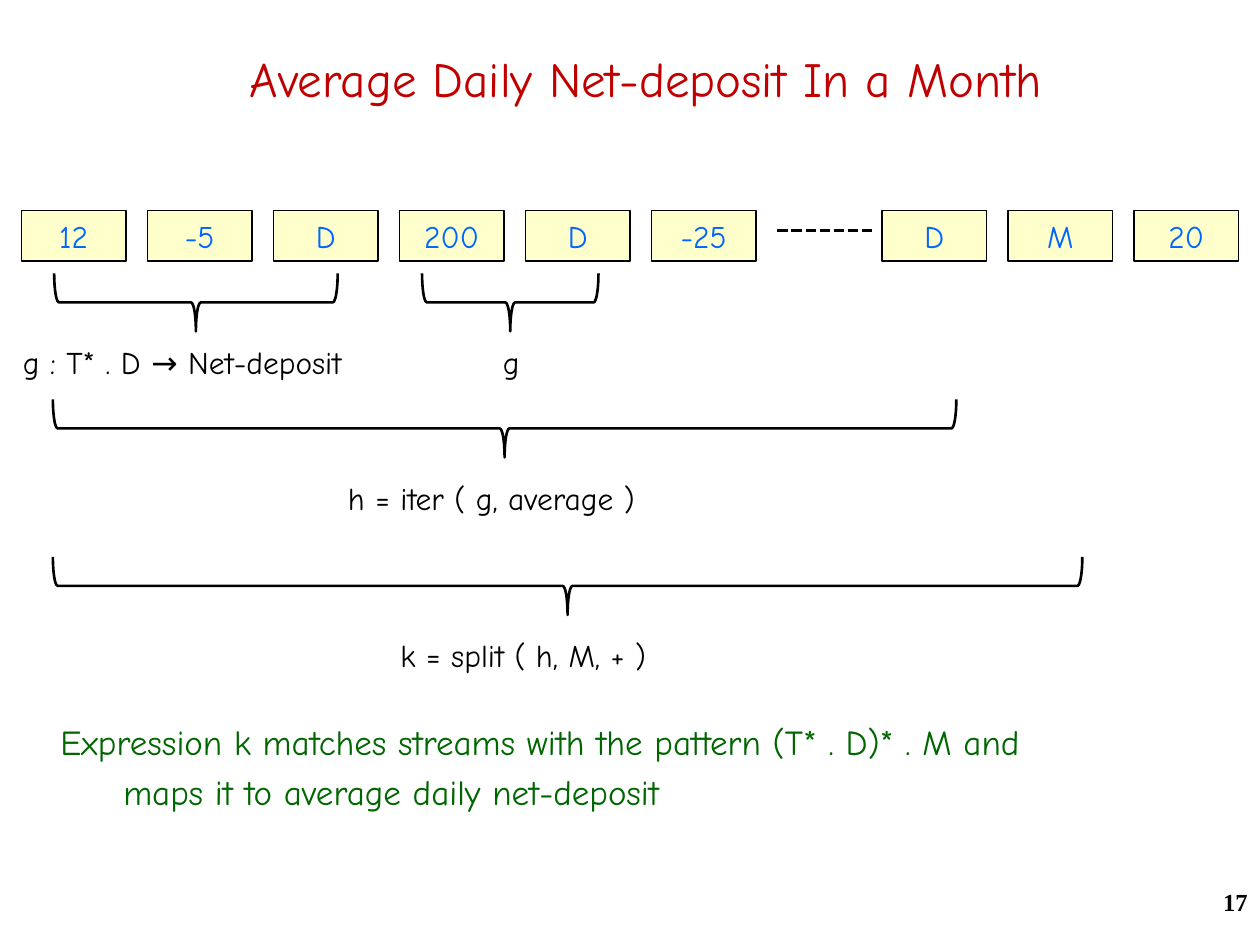
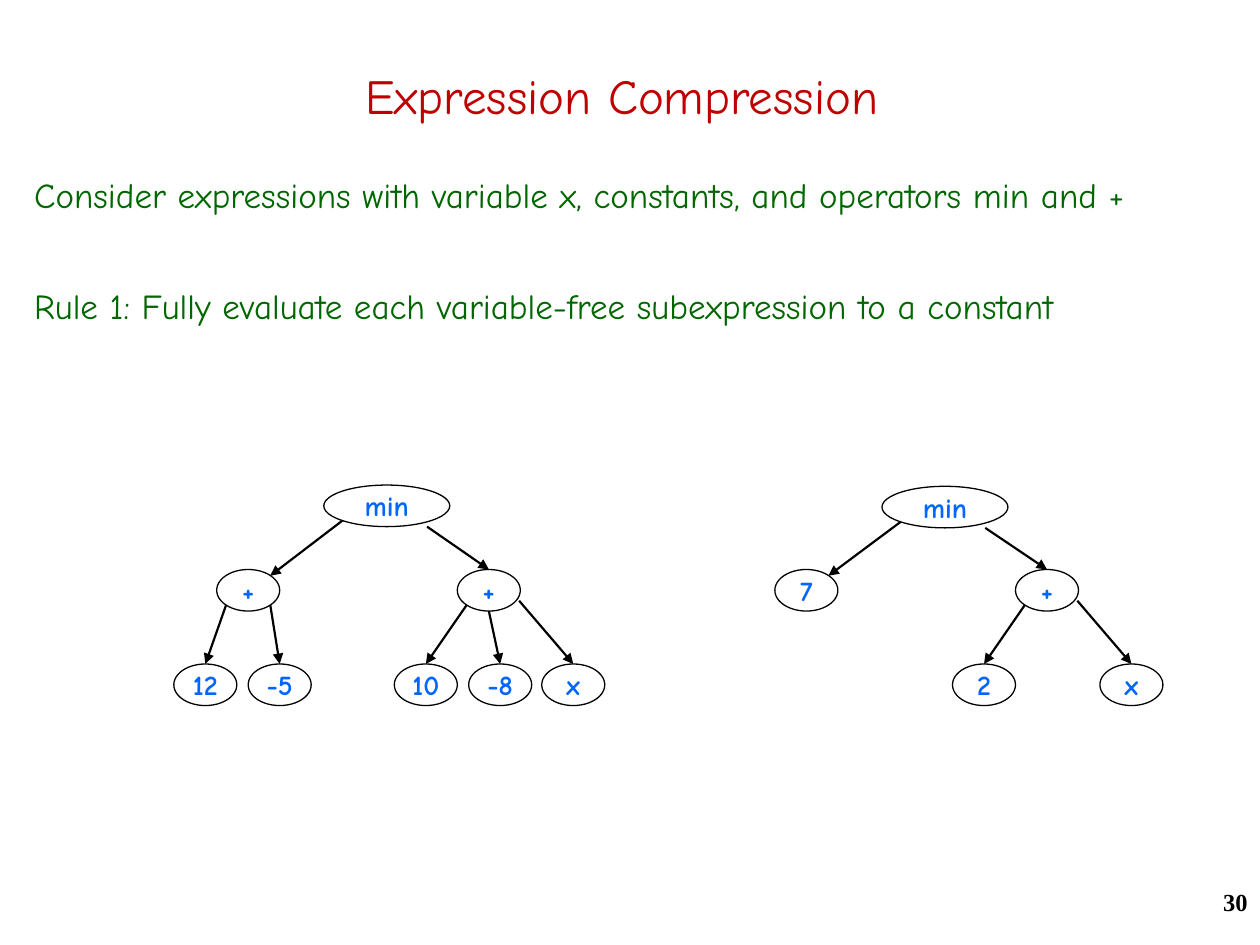
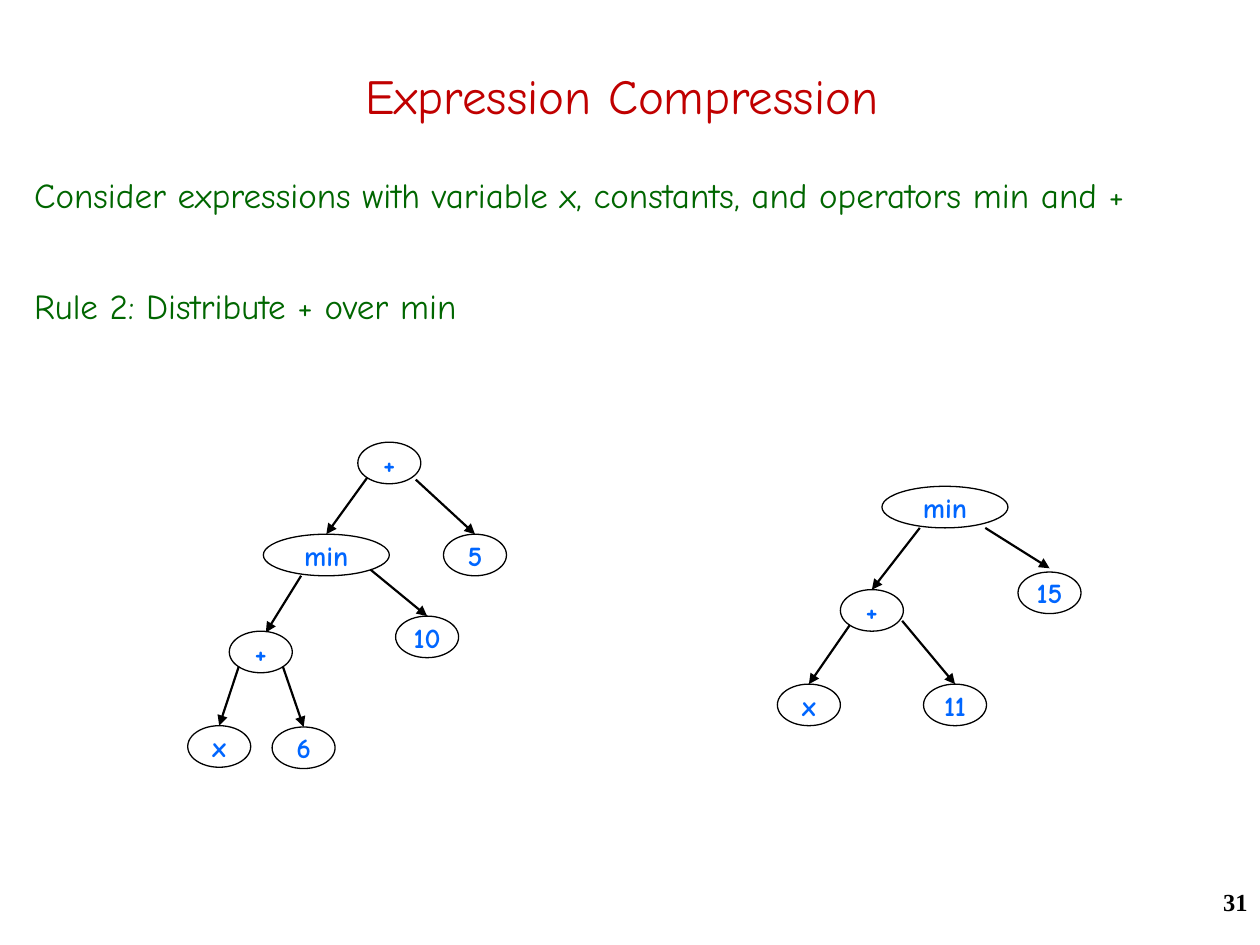
import pptx
import pptx.dml.color
import pptx.enum.dml
import pptx.enum.shapes
import pptx.enum.text
import pptx.oxml.ns
import pptx.util
from dataclasses import dataclass
from lxml import etree

Inches, Pt = pptx.util.Inches, pptx.util.Pt
SHAPE = pptx.enum.shapes.MSO_SHAPE
ALIGN = pptx.enum.text.PP_ALIGN
ANCHOR = pptx.enum.text.MSO_ANCHOR


@dataclass(frozen=True)
class Theme:
    font: str = "Comic Neue"
    number_font: str = "Times New Roman"
    title: str = "C00000"
    body: str = "006600"
    token: str = "0066FF"
    token_fill: str = "FFFFCC"
    ink: str = "000000"
    title_size: int = 28
    body_size: int = 20
    label_size: int = 18
    node_size: int = 16
    number_size: int = 14


THEME = Theme()
SLIDE_W, SLIDE_H = 10, 7.5
NUMBER_BOX = (7.92, 6.99, 2.08, 0.5)

# Stream slide: tokens sit one inch apart in two groups
STREAM = {
    "title": "Average Daily Net-deposit In a Month",
    "title_box": (0.25, 0.33, 9.75, 0.58),
    "number": 17,
    "token_groups": [(0.17, ["12", "-5", "D", "200", "D", "-25"]),
                     (7, ["D", "M", "20"])],
    "ellipsis": ((6.17, 1.83), (6.92, 1.83)),
    # Each match: brace left, top and span; label, its left, top and width
    "matches": [
        ((0.43, 2.17, 2.25), " g : T* . D → Net-deposit", (0, 2.67, 3.17)),
        ((3.35, 2.17, 1.4), " g", (3.81, 2.67, 0.49)),
        ((0.42, 3.17, 7.17), " h = iter ( g, average )", (2.58, 3.75, 2.83)),
        ((0.42, 4.42, 8.17), "k = split ( h, M, + )", (3.08, 5, 2.83)),
    ],
    "summary": ["Expression k matches streams with the pattern (T* . D)* . M and",
                "\tmaps it to average daily net-deposit"],
    "summary_box": (0.38, 5.67, 9.62, 1.08),
}
TOKEN_TOP, TOKEN_W, TOKEN_H, TOKEN_STEP = 1.67, 0.83, 0.4, 1
BRACE_DEPTH = 0.46
SUMMARY_GAP, RULE_GAP = 4.6, 39

# Where edges leave or reach a node, as shares of the node's width and height
TOP, TOP_RIGHT, TOP_INNER, ABOVE = (0.5, 0), (0.85, 0.15), (0.58, 0.03), (0.5, -0.09)
LEFT, MIDDLE, RIGHT = (0.15, 0.85), (0.5, 1), (0.85, 0.85)
SIDE, CORNER = (0.98, 0.75), (0.92, 0.9)
MIN_LEFT, MIN_RIGHT = (0.3, 1), (0.82, 1)

# Trees: nodes are key: (label, left, top); edges are (parent, child, leave, reach)
COMPRESSION_TITLE = "Expression Compression "
COMPRESSION_TITLE_BOX = (0.75, 0.42, 8.5, 0.67)
PREMISE = "Consider expressions with variable x, constants, and operators min and +"
NODE_H = 0.33
NODE_W = {"min": 1}
DEFAULT_NODE_W = 0.5

RULES = [
    {
        "number": 30,
        "rule": "Rule 1: Fully evaluate each variable-free subexpression to a constant",
        "body_height": 5.67,
        "trees": [
            ({"min": ("min", 2.57, 3.85),
              "sum1": ("+", 1.72, 4.52), "sum2": ("+", 3.63, 4.52),
              "12": ("12", 1.38, 5.27), "-5": ("-5", 1.97, 5.27),
              "10": ("10", 3.13, 5.27), "-8": ("-8", 3.72, 5.27),
              "x": ("x", 4.3, 5.27)},
             [("min", "sum1", LEFT, TOP_RIGHT), ("min", "sum2", MIN_RIGHT, TOP),
              ("sum1", "12", LEFT, TOP), ("sum1", "-5", RIGHT, TOP),
              ("sum2", "10", LEFT, TOP), ("sum2", "-8", MIDDLE, TOP),
              ("sum2", "x", SIDE, TOP)]),
            ({"min": ("min", 7, 3.86),
              "7": ("7", 6.15, 4.52), "sum": ("+", 8.06, 4.52),
              "2": ("2", 7.56, 5.27), "x": ("x", 8.73, 5.27)},
             [("min", "7", LEFT, TOP_RIGHT), ("min", "sum", MIN_RIGHT, TOP),
              ("sum", "2", LEFT, TOP), ("sum", "x", SIDE, TOP)]),
        ],
    },
    {
        "number": 31,
        "rule": "Rule 2: Distribute + over min",
        "body_height": 1.75,
        "trees": [
            ({"outer": ("+", 2.84, 3.51),
              "min": ("min", 2.09, 4.24), "5": ("5", 3.52, 4.24),
              "inner": ("+", 1.82, 5.01), "10": ("10", 3.14, 4.89),
              "x": ("x", 1.49, 5.76), "6": ("6", 2.16, 5.77)},
             [("outer", "min", LEFT, TOP), ("outer", "5", CORNER, TOP),
              ("min", "inner", MIN_LEFT, TOP_INNER), ("min", "10", RIGHT, TOP),
              ("inner", "x", LEFT, TOP), ("inner", "6", RIGHT, TOP)]),
            ({"min": ("min", 7, 3.86),
              "sum": ("+", 6.67, 4.68), "15": ("15", 8.08, 4.54),
              "x": ("x", 6.17, 5.43), "11": ("11", 7.33, 5.43)},
             [("min", "sum", MIN_LEFT, TOP), ("min", "15", MIN_RIGHT, ABOVE),
              ("sum", "x", LEFT, TOP), ("sum", "11", SIDE, TOP)]),
        ],
    },
]


# Shared helpers
def inches(lengths):
    return [Inches(length) for length in lengths]


def rgb(color):
    return pptx.dml.color.RGBColor.from_string(color)


def write(frame, lines, size, color, align=ALIGN.LEFT, font=THEME.font,
          bold=False, gap=0, wrap=True):
    frame.text = "\n".join(lines)
    frame.word_wrap = wrap
    frame.auto_size = pptx.enum.text.MSO_AUTO_SIZE.NONE
    for index, paragraph in enumerate(frame.paragraphs):
        paragraph.alignment = align
        paragraph.space_before = Pt(gap if index else 0)
        for run in paragraph.runs:
            run.font.size, run.font.name, run.font.bold = Pt(size), font, bold
            run.font.color.rgb = rgb(color)


def place(placeholder, box):
    (placeholder.left, placeholder.top,
     placeholder.width, placeholder.height) = inches(box)


def add_text(slide, box, lines, size, color, **style):
    frame = slide.shapes.add_textbox(*inches(box)).text_frame
    write(frame, lines, size, color, **style)


def add_outline(slide, kind, box, weight, fill=None):
    shape = slide.shapes.add_shape(kind, *inches(box))
    shape.shadow.inherit = False
    shape.line.color.rgb = rgb(THEME.ink)
    shape.line.width = Pt(weight)
    if fill:
        shape.fill.solid()
        shape.fill.fore_color.rgb = rgb(fill)
    else:
        shape.fill.background()
    return shape


def add_line(slide, start, end, weight, dashed=False, arrow=False):
    line = slide.shapes.add_connector(
        pptx.enum.shapes.MSO_CONNECTOR.STRAIGHT, *inches(start + end))
    line.line.color.rgb = rgb(THEME.ink)
    line.line.width = Pt(weight)
    if dashed:
        line.line.dash_style = pptx.enum.dml.MSO_LINE.SQUARE_DOT
    qn = pptx.oxml.ns.qn
    properties = line._element.spPr
    if arrow:
        etree.SubElement(properties.find(qn("a:ln")), qn("a:tailEnd"), type="triangle")
    etree.SubElement(properties, qn("a:effectLst"))


def start_slide(deck, layout, title, title_box, number):
    slide = deck.slides.add_slide(deck.slide_layouts.get_by_name(layout))
    place(slide.shapes.title, title_box)
    frame = slide.shapes.title.text_frame
    write(frame, [title], THEME.title_size, THEME.title, align=ALIGN.CENTER)
    frame.vertical_anchor = ANCHOR.MIDDLE
    add_text(slide, NUMBER_BOX, [str(number)], THEME.number_size, THEME.ink,
             align=ALIGN.RIGHT, font=THEME.number_font, bold=True)
    return slide


# Stream of tokens with braces for the matched spans
def add_brace(slide, left, top, span):
    # The brace is drawn upright about the same centre, then turned to point down
    box = (left + (span - BRACE_DEPTH) / 2, top + (BRACE_DEPTH - span) / 2,
           BRACE_DEPTH, span)
    add_outline(slide, SHAPE.LEFT_BRACE, box, 1.5).rotation = 270


def build_stream(deck):
    slide = start_slide(deck, "Title Only", STREAM["title"], STREAM["title_box"],
                        STREAM["number"])
    for group_left, tokens in STREAM["token_groups"]:
        for column, token in enumerate(tokens):
            box = (group_left + column * TOKEN_STEP, TOKEN_TOP, TOKEN_W, TOKEN_H)
            cell = add_outline(slide, SHAPE.RECTANGLE, box, 1, THEME.token_fill)
            write(cell.text_frame, [token], THEME.label_size, THEME.token,
                  align=ALIGN.CENTER)
    add_line(slide, *STREAM["ellipsis"], 2, dashed=True)
    for brace, label, label_box in STREAM["matches"]:
        add_brace(slide, *brace)
        add_text(slide, label_box + (TOKEN_H,), [label], THEME.label_size, THEME.ink)
    add_text(slide, STREAM["summary_box"], STREAM["summary"], THEME.body_size,
             THEME.body, gap=SUMMARY_GAP)


# Expression trees before and after a rule
def add_tree(slide, nodes, edges):
    boxes = {key: (left, top, NODE_W.get(label, DEFAULT_NODE_W), NODE_H)
             for key, (label, left, top) in nodes.items()}

    def point(key, share):
        left, top, width, height = boxes[key]
        return left + share[0] * width, top + share[1] * height

    for key, (label, _, _) in nodes.items():
        node = add_outline(slide, SHAPE.OVAL, boxes[key], 0.75)
        write(node.text_frame, [label], THEME.node_size, THEME.token,
              align=ALIGN.CENTER, bold=True, wrap=False)
        node.text_frame.vertical_anchor = ANCHOR.MIDDLE
    for parent, child, leave, reach in edges:
        add_line(slide, point(parent, leave), point(child, reach), 1.25, arrow=True)


def build_rule(deck, rule):
    slide = start_slide(deck, "Title and Content", COMPRESSION_TITLE,
                        COMPRESSION_TITLE_BOX, rule["number"])
    body = slide.placeholders[1]
    place(body, (0.17, 1.33, 9.83, rule["body_height"]))
    write(body.text_frame, [PREMISE, rule["rule"]], THEME.body_size, THEME.body,
          gap=RULE_GAP)
    for paragraph in body.text_frame.paragraphs:
        properties = paragraph._p.get_or_add_pPr()
        properties.set("marL", str(Inches(0.38)))
        properties.set("indent", str(-Inches(0.38)))
        etree.SubElement(properties, pptx.oxml.ns.qn("a:buNone"))
    for nodes, edges in rule["trees"]:
        add_tree(slide, nodes, edges)


def main():
    deck = pptx.Presentation()
    deck.slide_width, deck.slide_height = inches((SLIDE_W, SLIDE_H))
    build_stream(deck)
    for rule in RULES:
        build_rule(deck, rule)
    deck.save("out.pptx")


if __name__ == "__main__":
    main()
